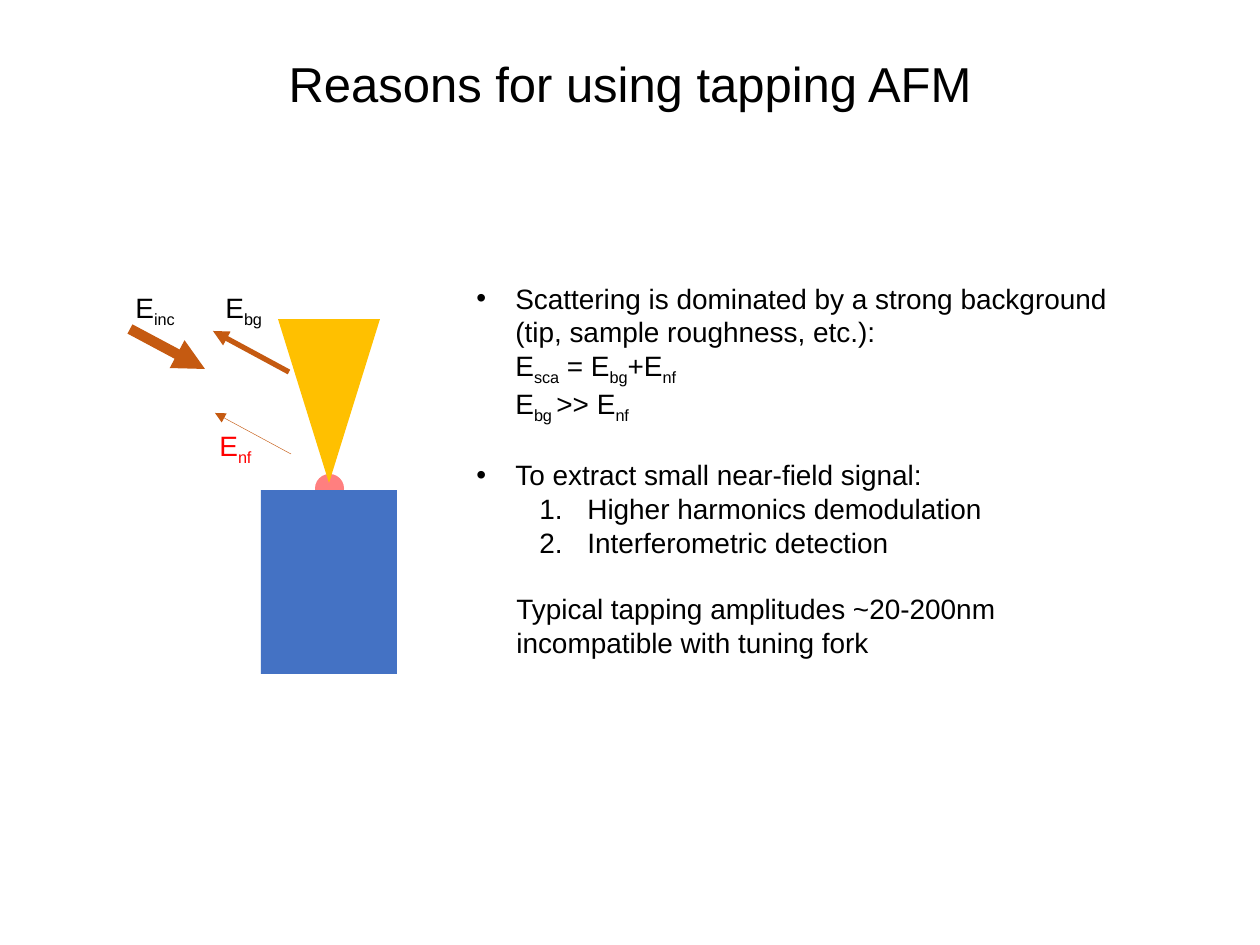
"""Build the slide on reasons for using tapping AFM."""
import pptx
import pptx.util
import pptx.dml.color
import pptx.enum.shapes
import pptx.enum.text
import pptx.oxml
import pptx.oxml.ns

PX = 914400 / 126
FONT = "Arial"
BLACK, RED, ORANGE = "000000", "FF0000", "C55A11"
SHAPE = pptx.enum.shapes.MSO_SHAPE
ALIGN = pptx.enum.text.PP_ALIGN

# Pieces of text alternate between normal and subscript.
TITLE = ["Reasons for using tapping AFM"]
LABELS = [
    (123, 284, ["E", "inc"], BLACK),
    (213, 284, ["E", "bg"], BLACK),
    (207, 422, ["E", "nf"], RED),
]
SHAPES = [
    (SHAPE.OVAL, (315, 474, 29, 29), "FF0000", 50, 0),
    (SHAPE.ISOSCELES_TRIANGLE, (278, 319, 102, 164), "FFC000", 100, 180),
    (SHAPE.RECTANGLE, (261, 490, 136, 184), "4472C4", 100, 0),
]
ARROWS = [
    ((130, 329, 205, 369), 6),
    ((289, 372, 213, 331), 3),
    ((291, 454, 215, 413), 0.25),
]
DOT = '<a:buChar {} char="•"/>'
NUMBER = '<a:buAutoNum {} type="arabicPeriod"/>'
NONE = "<a:buNone {}/>"
POINTS = [
    (DOT, 39, -39, 0, ["Scattering is dominated by a strong background (tip, sample roughness, etc.):\nE",
                       "sca", " = E", "bg", "+E", "nf", "\nE", "bg ", ">> E", "nf"]),
    (DOT, 39, -39, 19, ["To extract small near-field signal:"]),
    (NUMBER, 111, -48, 0, ["Higher harmonics demodulation"]),
    (NUMBER, 111, -48, 0, ["Interferometric detection"]),
    (NONE, 40, 0, 19, ["Typical tapping amplitudes ~20-200nm incompatible with tuning fork"]),
]


def px(n):
    return round(n * PX)


def rgb(value):
    return pptx.dml.color.RGBColor.from_string(value)


def xml(tag):
    return pptx.oxml.parse_xml(tag.format(pptx.oxml.ns.nsdecls("a")))


def add_runs(p, pieces, size, color):
    for i, piece in enumerate(pieces):
        for j, line in enumerate(piece.split("\n")):
            if j:
                p.add_line_break()
            if not line:
                continue
            r = p.add_run()
            r.text = line
            r.font.name, r.font.size = FONT, pptx.util.Pt(size)
            r.font.color.rgb = rgb(color)
            if i % 2:
                r._r.get_or_add_rPr().set("baseline", "-25000")


def add_box(slide, box):
    tf = slide.shapes.add_textbox(*map(px, box)).text_frame
    tf.word_wrap = True
    return tf


def add_title(slide):
    tf = add_box(slide, (0, 0, 1260, 174))
    tf.vertical_anchor = pptx.enum.text.MSO_ANCHOR.MIDDLE
    p = tf.paragraphs[0]
    p.alignment, p.line_spacing = ALIGN.CENTER, 0.9
    add_runs(p, TITLE, 28, BLACK)


def add_solid(slide, kind, box, color, opacity, rotation):
    s = slide.shapes.add_shape(kind, *map(px, box))
    s.shadow.inherit = False
    s.rotation = rotation
    s.fill.solid()
    s.fill.fore_color.rgb = rgb(color)
    s.line.fill.background()
    if opacity < 100:
        fill = s._element.spPr.find(".//" + pptx.oxml.ns.qn("a:srgbClr"))
        fill.append(xml(f'<a:alpha {{}} val="{opacity * 1000}"/>'))


def add_arrow(slide, ends, width):
    s = slide.shapes.add_connector(pptx.enum.shapes.MSO_CONNECTOR.STRAIGHT, *map(px, ends))
    s.line.color.rgb = rgb(ORANGE)
    s.line.width = pptx.util.Pt(width)
    s.line._get_or_add_ln().append(xml('<a:tailEnd {} type="triangle"/>'))
    s._element.spPr.append(xml("<a:effectLst {}/>"))


def add_points(slide):
    tf = add_box(slide, (464, 275, 667, 398))
    for i, (bullet, margin, indent, before, pieces) in enumerate(POINTS):
        p = tf.add_paragraph() if i else tf.paragraphs[0]
        p.space_before = pptx.util.Pt(before)
        pPr = p._p.get_or_add_pPr()
        pPr.set("marL", str(px(margin)))
        pPr.set("indent", str(px(indent)))
        pPr.append(xml(f'<a:buFont {{}} typeface="{FONT}"/>'))
        pPr.append(xml(bullet))
        add_runs(p, pieces, 16, BLACK)


def main():
    prs = pptx.Presentation()
    prs.slide_width, prs.slide_height = px(1260), px(945)
    slide = prs.slides.add_slide(prs.slide_layouts[6])
    add_title(slide)
    for shape in SHAPES:
        add_solid(slide, *shape)
    for arrow in ARROWS:
        add_arrow(slide, *arrow)
    for x, y, pieces, color in LABELS:
        add_runs(add_box(slide, (x, y, 76, 47)).paragraphs[0], pieces, 16, color)
    add_points(slide)
    prs.save("out.pptx")


if __name__ == "__main__":
    main()
